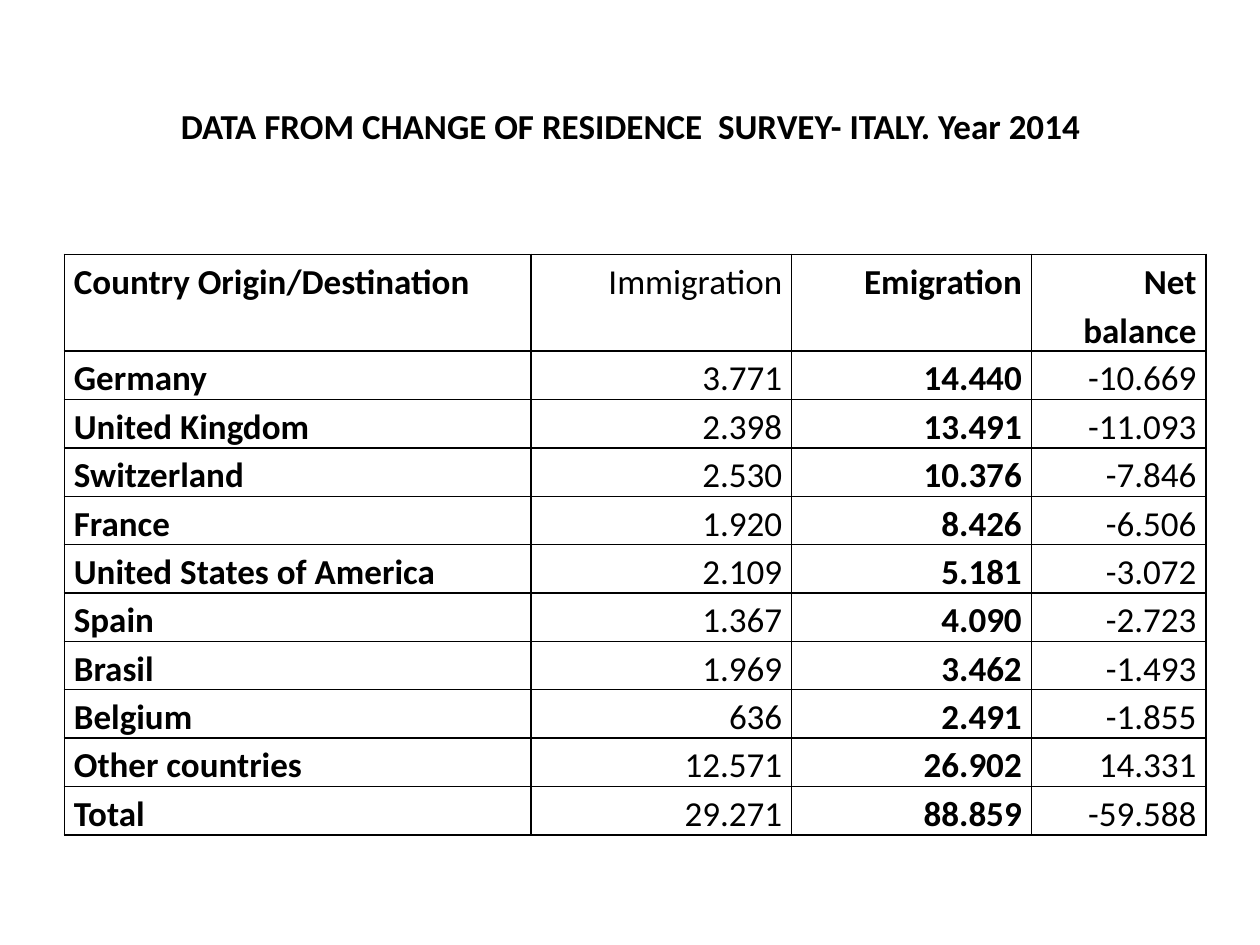
from lxml.etree import SubElement
from pptx import Presentation
from pptx.dml.color import RGBColor
from pptx.enum.text import MSO_ANCHOR as Anchor, PP_ALIGN as Align
from pptx.oxml.ns import qn
from pptx.util import Cm, Pt

COLORS = {"text": "000000", "border": "000000"}
FONT = "Calibri"
TITLE = "DATA FROM CHANGE OF RESIDENCE  SURVEY- ITALY. Year 2014"
HEADER = ("Country Origin/Destination", "Immigration", "Emigration", "Net balance")
ROWS = [
    ("Germany", "3.771", "14.440", "-10.669"),
    ("United Kingdom", "2.398", "13.491", "-11.093"),
    ("Switzerland", "2.530", "10.376", "-7.846"),
    ("France", "1.920", "8.426", "-6.506"),
    ("United States of America", "2.109", "5.181", "-3.072"),
    ("Spain", "1.367", "4.090", "-2.723"),
    ("Brasil", "1.969", "3.462", "-1.493"),
    ("Belgium", "636", "2.491", "-1.855"),
    ("Other countries", "12.571", "26.902", "14.331"),
    ("Total", "29.271", "88.859", "-59.588"),
]
COL_WIDTHS = (9.4, 5.26, 4.83, 3.52)
ROW_HEIGHT = 0.84


def add_run(p, text, bold):
    r = p.add_run()
    r.text = text
    r.font.name = FONT
    r.font.size = Pt(20)
    r.font.bold = bold
    r.font.color.rgb = RGBColor.from_string(COLORS["text"])


def add_title(s):
    sp = s.shapes.add_textbox(Cm(1.3), Cm(0.76), Cm(22.83), Cm(3.56))
    tf = sp.text_frame
    tf.word_wrap = True
    tf.vertical_anchor = Anchor.MIDDLE
    p = tf.paragraphs[0]
    p.alignment = Align.CENTER
    add_run(p, TITLE, True)


def set_borders(cell):
    # Border lines must come before the fill in the cell properties
    tc_pr = cell._tc.get_or_add_tcPr()
    for i, side in enumerate(("lnL", "lnR", "lnT", "lnB")):
        ln = SubElement(tc_pr, qn(f"a:{side}"), w=str(Pt(1)))
        fill = SubElement(ln, qn("a:solidFill"))
        SubElement(fill, qn("a:srgbClr"), val=COLORS["border"])
        tc_pr.insert(i, ln)


def fill_cell(cell, text, align, bold):
    cell.fill.background()
    set_borders(cell)
    cell.margin_left = cell.margin_right = Cm(0.19)
    cell.margin_top = cell.margin_bottom = 0
    p = cell.text_frame.paragraphs[0]
    p.alignment = align
    p.line_spacing = 1.15
    add_run(p, text, bold)


def add_data_table(s):
    data = [HEADER, *ROWS]
    frame = s.shapes.add_table(len(data), len(HEADER), Cm(1.3), Cm(5.13),
                               Cm(sum(COL_WIDTHS)), Cm(ROW_HEIGHT * (len(data) + 1)))
    table = frame.table
    table.first_row = table.horz_banding = False
    for col, width in zip(table.columns, COL_WIDTHS):
        col.width = Cm(width)
    for i, values in enumerate(data):
        is_header = i == 0
        # The header takes two lines of text
        table.rows[i].height = Cm(ROW_HEIGHT * (2 if is_header else 1))
        for j, text in enumerate(values):
            label_align = Align.LEFT if is_header else Align.JUSTIFY
            align = Align.RIGHT if j else label_align
            bold = j in (0, 2) or (is_header and j == 3)
            cell = table.cell(i, j)
            fill_cell(cell, text, align, bold)
            if values[0] == "Other countries" and j:
                cell.vertical_anchor = Anchor.BOTTOM


def main():
    prs = Presentation()
    prs.slide_width, prs.slide_height = Cm(25.4), Cm(19.05)
    s = prs.slides.add_slide(prs.slide_layouts[6])
    add_title(s)
    add_data_table(s)
    prs.save("out.pptx")


if __name__ == "__main__":
    main()
